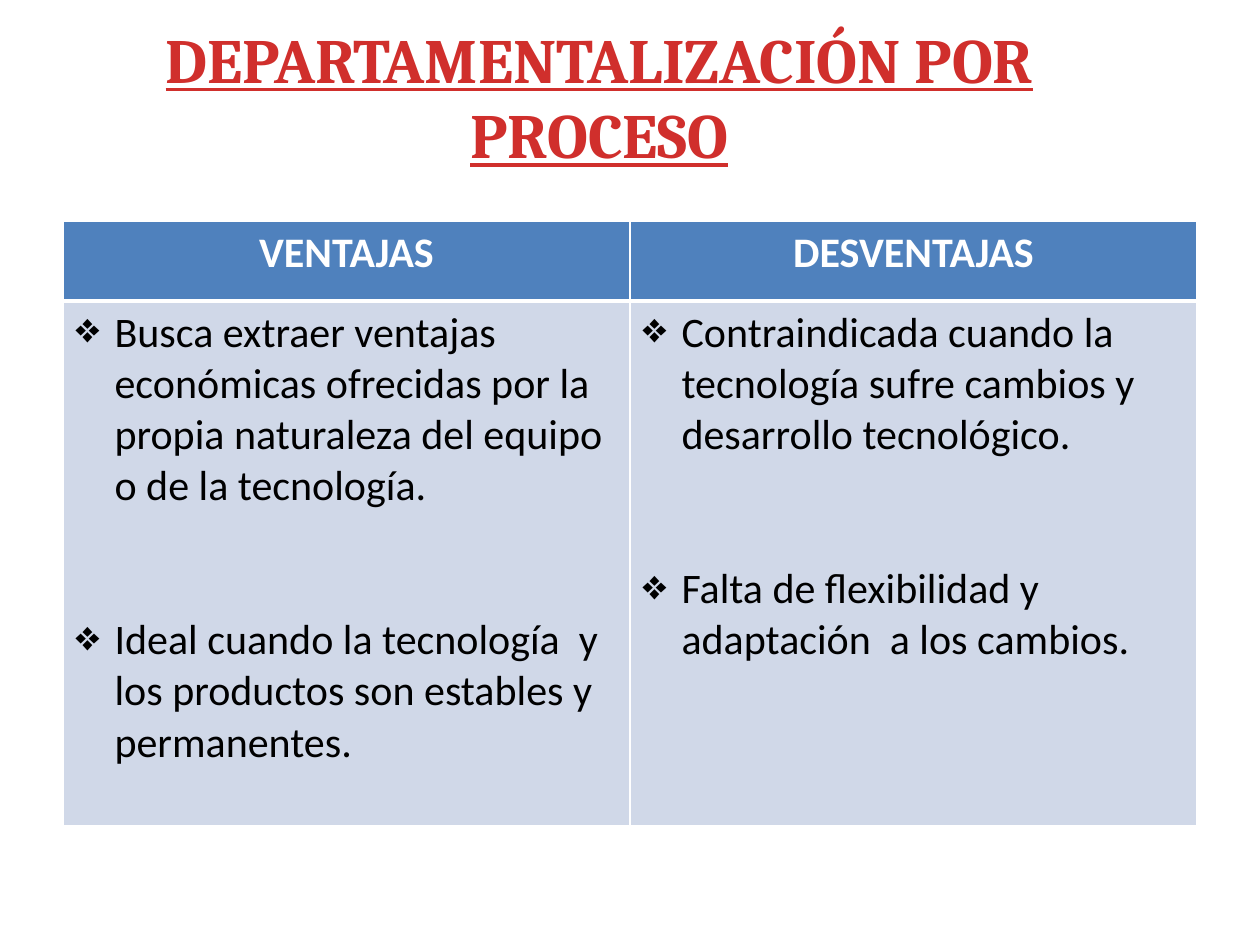
from dataclasses import dataclass

from lxml import etree
from pptx import Presentation
from pptx.dml.color import RGBColor
from pptx.enum.text import MSO_ANCHOR, PP_ALIGN
from pptx.oxml.ns import qn
from pptx.util import Pt

CENTER, LEFT = PP_ALIGN.CENTER, PP_ALIGN.LEFT
TOP = MSO_ANCHOR.TOP
EMU_PER_PX = 914400 / 126

WHITE, BLACK = "FFFFFF", "000000"
TITLE_RED, HEADER_BLUE, BODY_BLUE = "D02F2C", "4F81BD", "D0D8E8"
BULLET_INDENT = 39
BULLET_GAP = 58.6


@dataclass
class Column:
    heading: str
    points: list[str]


COLUMNS = [
    Column("VENTAJAS", [
        "Busca extraer ventajas económicas ofrecidas por la propia naturaleza "
        "del equipo o de la tecnología.",
        "Ideal cuando la tecnología  y los productos son estables y permanentes.",
    ]),
    Column("DESVENTAJAS", [
        "Contraindicada cuando la tecnología sufre cambios y desarrollo tecnológico.",
        "Falta de flexibilidad y adaptación  a los cambios.",
    ]),
]
COLUMN_WIDTH = 567
ROW_HEIGHTS = [80, 525]


def px(length: int) -> int:
    return round(length * EMU_PER_PX)


def color(value: str) -> RGBColor:
    return RGBColor.from_string(value)


def write(para, text: str, *, font="Calibri", size=24, fill=BLACK, bold=False,
          underline=False, align=LEFT) -> None:
    para.alignment = align
    span = para.add_run()
    span.text = text
    span.font.name = font
    span.font.size = Pt(size)
    span.font.bold = bold
    span.font.underline = underline
    span.font.color.rgb = color(fill)


def add_bullet(para) -> None:
    properties = para._p.get_or_add_pPr()
    properties.set("marL", str(px(BULLET_INDENT)))
    properties.set("indent", str(-px(BULLET_INDENT)))
    etree.SubElement(properties, qn("a:buChar"), char="❖")


def style_cell(cell, fill: str, top: int = 1, bottom: int = 1) -> None:
    """Fill the cell and give it white borders, with widths in points."""
    properties = cell._tc.get_or_add_tcPr()
    for side, width in {"L": 1, "R": 1, "T": top, "B": bottom}.items():
        line = etree.SubElement(properties, qn(f"a:ln{side}"), w=str(Pt(width)))
        solid = etree.SubElement(line, qn("a:solidFill"))
        etree.SubElement(solid, qn("a:srgbClr"), val=WHITE)
    cell.fill.solid()
    cell.fill.fore_color.rgb = color(fill)


def add_title(slide, text: str) -> None:
    box = slide.shapes.add_textbox(px(44), px(14), px(1111), px(242))
    frame = box.text_frame
    frame.word_wrap = True
    frame.vertical_anchor = TOP
    write(frame.paragraphs[0], text, font="Cambria", size=36, fill=TITLE_RED,
          bold=True, underline=True, align=CENTER)


def add_comparison(slide, columns: list[Column]) -> None:
    table = slide.shapes.add_table(
        len(ROW_HEIGHTS), len(columns), px(63), px(221),
        px(COLUMN_WIDTH * len(columns)), px(sum(ROW_HEIGHTS))).table
    for row, height in zip(table.rows, ROW_HEIGHTS):
        row.height = px(height)
    for index, column in enumerate(columns):
        table.columns[index].width = px(COLUMN_WIDTH)
        header, body = table.cell(0, index), table.cell(1, index)
        style_cell(header, HEADER_BLUE, bottom=3)
        style_cell(body, BODY_BLUE, top=3)
        write(header.text_frame.paragraphs[0], column.heading,
              fill=WHITE, bold=True, align=CENTER)
        for number, point in enumerate(column.points):
            frame = body.text_frame
            para = frame.add_paragraph() if number else frame.paragraphs[0]
            write(para, point)
            if number:
                para.space_before = Pt(BULLET_GAP)
            add_bullet(para)


def main() -> None:
    deck = Presentation()
    deck.slide_width, deck.slide_height = px(1260), px(945)
    page = deck.slides.add_slide(deck.slide_layouts[6])
    add_comparison(page, COLUMNS)
    add_title(page, "DEPARTAMENTALIZACIÓN POR PROCESO")
    deck.save("out.pptx")


if __name__ == "__main__":
    main()
